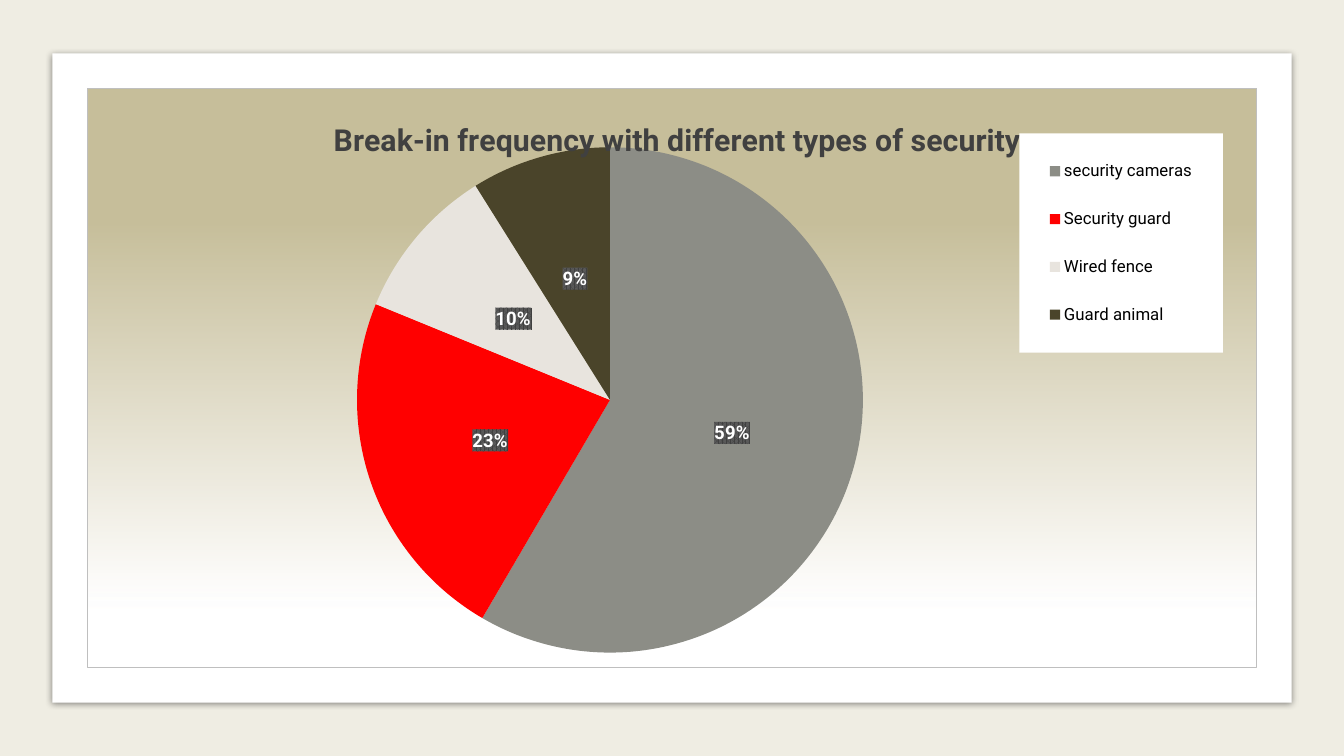
from lxml import etree
from pptx import Presentation
from pptx.chart.data import CategoryChartData
from pptx.dml.color import RGBColor
from pptx.enum.chart import XL_CHART_TYPE, XL_LABEL_POSITION, XL_LEGEND_POSITION
from pptx.enum.shapes import MSO_SHAPE
from pptx.oxml import parse_xml
from pptx.oxml.ns import nsdecls, qn
from pptx.util import Inches, Pt

PIE = XL_CHART_TYPE.PIE
CENTER = XL_LABEL_POSITION.CENTER
RIGHT = XL_LEGEND_POSITION.RIGHT
RECTANGLE = MSO_SHAPE.RECTANGLE

FONT = "Roboto"
BACKGROUND = RGBColor(0xEF, 0xED, 0xE3)
WHITE = RGBColor(0xFF, 0xFF, 0xFF)
BLACK = RGBColor(0x00, 0x00, 0x00)
DARK = RGBColor(0x40, 0x40, 0x40)
STRIPE = RGBColor(0x59, 0x59, 0x59)
BORDER = RGBColor(0xBF, 0xBF, 0xBF)
SAND = RGBColor(0xC6, 0xBE, 0x9A)
CREAM = RGBColor(0xFC, 0xFB, 0xF9)

SLICES = [
    ("security cameras", 59, RGBColor(0x8C, 0x8D, 0x86)),
    ("Security guard", 23, RGBColor(0xFF, 0x00, 0x00)),
    ("Wired fence", 10, RGBColor(0xE8, 0xE4, 0xDE)),
    ("Guard animal", 9, RGBColor(0x4A, 0x44, 0x2A)),
]


def style_font(font, size, color, bold=False):
    """Apply the slide's typeface with a size, colour and weight."""
    font.name = FONT
    font.size = Pt(size)
    font.bold = bold
    font.color.rgb = color


def set_layout(el, index, x, y, w=None, h=None, inner=False):
    """Place a chart part at shares of the chart's size."""
    for old in el.findall(qn("c:layout")):
        el.remove(old)
    layout = etree.Element(qn("c:layout"))
    manual = etree.SubElement(layout, qn("c:manualLayout"))
    values = [("xMode", "edge"), ("yMode", "edge"), ("x", x), ("y", y), ("w", w), ("h", h)]
    if inner:
        values.insert(0, ("layoutTarget", "inner"))
    for tag, value in values:
        if value is not None:
            etree.SubElement(manual, qn(f"c:{tag}")).set("val", str(value))
    el.insert(index, layout)


def shape_properties(content):
    """Return chart shape properties holding the given DrawingML."""
    return parse_xml(f'<c:spPr {nsdecls("c", "a")}>{content}</c:spPr>')


def solid(color):
    """Return a solid fill in DrawingML."""
    return f'<a:solidFill><a:srgbClr val="{color}"/></a:solidFill>'


def add_panel(slide, x, y, w, h):
    """Draw the white panel with its soft shadow."""
    sp = slide.shapes.add_shape(RECTANGLE, x, y, w, h)
    sp.fill.solid()
    sp.fill.fore_color.rgb = WHITE
    sp.line.fill.background()
    sp.shadow.inherit = False
    effects = sp.element.spPr.find(qn("a:effectLst"))
    effects.append(parse_xml(
        f'<a:outerShdw {nsdecls("a")} blurRad="{Pt(5)}" dist="{Pt(1.4)}" dir="5400000">'
        '<a:srgbClr val="000000"><a:alpha val="43000"/></a:srgbClr></a:outerShdw>'))


def style_title(chart):
    """Write and place the chart title."""
    chart.has_title = True
    title = chart.chart_title
    title.include_in_layout = False
    p = title.text_frame.paragraphs[0]
    p.text = "Break-in frequency with different types of security"
    style_font(p.runs[0].font, 21.6, DARK, True)
    set_layout(chart.element.xpath("c:chart/c:title")[0], 1, 0.206, 0.044)


def style_legend(chart):
    """Set the legend in a white box at the right."""
    chart.has_legend = True
    chart.legend.position = RIGHT
    chart.legend.include_in_layout = False
    style_font(chart.legend.font, 12, BLACK)
    legend = chart.element.xpath("c:chart/c:legend")[0]
    set_layout(legend, 1, 0.797, 0.078, 0.174, 0.378)
    legend.find(qn("c:txPr")).addprevious(shape_properties(solid(WHITE)))


def style_slices(chart):
    """Colour the slices and label them."""
    plot = chart.plots[0]
    plot.vary_by_categories = True
    series = plot.series[0]
    for i, (_, _, color) in enumerate(SLICES):
        fill = series.points[i].format.fill
        fill.solid()
        fill.fore_color.rgb = color
    labels = series.data_labels
    labels.show_value = True
    labels.number_format = '0"%"'
    labels.number_format_is_linked = False
    labels.position = CENTER
    style_font(labels.font, 13.3, WHITE, True)
    text = chart.element.xpath(".//c:ser/c:dLbls/c:txPr")[0]
    text.addprevious(shape_properties(
        f'<a:pattFill prst="pct75"><a:fgClr><a:srgbClr val="{DARK}"/></a:fgClr>'
        f'<a:bgClr><a:srgbClr val="{STRIPE}"/></a:bgClr></a:pattFill>'))
    set_layout(chart.element.xpath("c:chart/c:plotArea")[0], 0,
               0.024, 0.102, 0.846, 0.872, inner=True)


def add_security_chart(slide, x, y, w, h):
    """Add the pie chart on its gradient ground."""
    data = CategoryChartData()
    data.categories = [name for name, _, _ in SLICES]
    data.add_series("Series 1", [value for _, value, _ in SLICES])
    chart = slide.shapes.add_chart(PIE, x, y, w, h, data).chart
    style_font(chart.font, 10, BLACK)
    style_title(chart)
    style_legend(chart)
    style_slices(chart)
    chart.element.find(qn("c:txPr")).addprevious(shape_properties(
        '<a:gradFill><a:gsLst>'
        f'<a:gs pos="23000"><a:srgbClr val="{SAND}"/></a:gs>'
        f'<a:gs pos="85000"><a:srgbClr val="{CREAM}"/></a:gs>'
        f'<a:gs pos="90000"><a:srgbClr val="{WHITE}"><a:alpha val="54000"/></a:srgbClr></a:gs>'
        '</a:gsLst><a:lin ang="5400000" scaled="0"/></a:gradFill>'
        f'<a:ln w="{Pt(0.75)}">{solid(BORDER)}</a:ln>'))


def main():
    """Build the slide and save it."""
    prs = Presentation()
    prs.slide_width = Inches(13.33)
    prs.slide_height = Inches(7.5)
    slide = prs.slides.add_slide(prs.slide_layouts[6])
    slide.background.fill.solid()
    slide.background.fill.fore_color.rgb = BACKGROUND

    x, y = Inches(0.52), Inches(0.53)
    w, h = prs.slide_width - 2 * x, prs.slide_height - 2 * y
    add_panel(slide, x, y, w, h)
    pad = Inches(0.34)
    add_security_chart(slide, x + pad, y + pad, w - 2 * pad, h - 2 * pad)
    prs.save("out.pptx")


if __name__ == "__main__":
    main()
